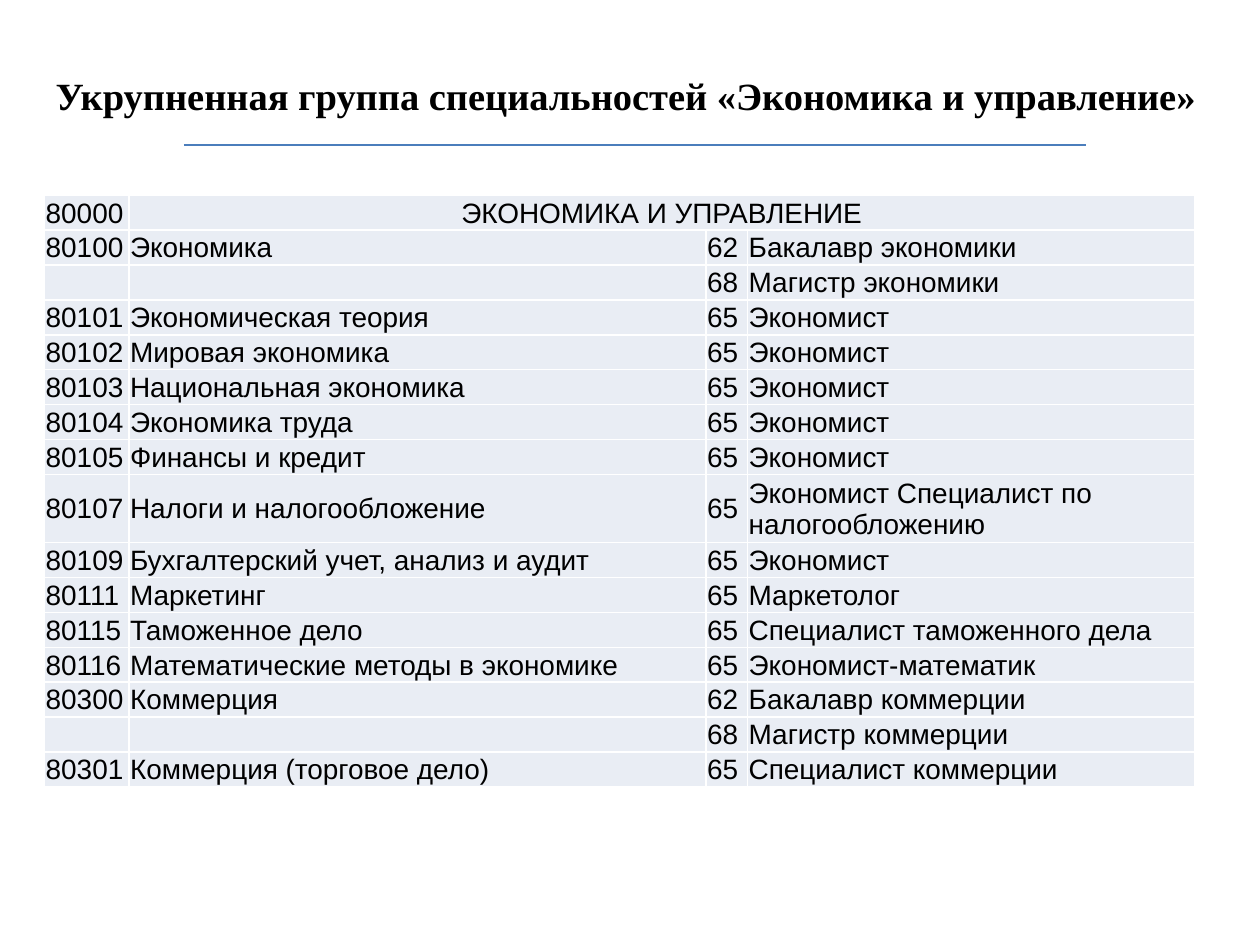
import pptx
import pptx.dml.color
import pptx.enum.shapes
import pptx.enum.text
import pptx.oxml.ns
import pptx.util
from lxml import etree

Pt = pptx.util.Pt
qn = pptx.oxml.ns.qn
ALIGN = pptx.enum.text.PP_ALIGN
MIDDLE = pptx.enum.text.MSO_ANCHOR.MIDDLE

COLUMNS = [48.24, 329.76, 23.76, 255.6]
ROW_HEIGHT, TALL_ROW_HEIGHT = 19.95, 39
SPECIALTIES = [
    ("80000", "ЭКОНОМИКА И УПРАВЛЕНИЕ", "", ""),
    ("80100", "Экономика", "62", "Бакалавр экономики"),
    ("", "", "68", "Магистр экономики"),
    ("80101", "Экономическая теория", "65", "Экономист"),
    ("80102", "Мировая экономика", "65", "Экономист"),
    ("80103", "Национальная экономика", "65", "Экономист"),
    ("80104", "Экономика труда", "65", "Экономист"),
    ("80105", "Финансы и кредит", "65", "Экономист"),
    ("80107", "Налоги и налогообложение", "65", "Экономист Специалист по налогообложению"),
    ("80109", "Бухгалтерский учет, анализ и аудит", "65", "Экономист"),
    ("80111", "Маркетинг", "65", "Маркетолог"),
    ("80115", "Таможенное дело", "65", "Специалист таможенного дела"),
    ("80116", "Математические методы в экономике", "65", "Экономист-математик"),
    ("80300", "Коммерция", "62", "Бакалавр коммерции"),
    ("", "", "68", "Магистр коммерции"),
    ("80301", "Коммерция (торговое дело)", "65", "Специалист коммерции"),
]


def rgb(color):
    """Turn a hex string into a colour."""
    return pptx.dml.color.RGBColor.from_string(color)


def write(tf, text, size=16, font="Arial", color="000000", bold=False, align=ALIGN.LEFT):
    """Write one formatted paragraph into a text frame."""
    tf.word_wrap = True
    p = tf.paragraphs[0]
    p.alignment = align
    if not text:
        p._p.get_or_add_endParaRPr().set("sz", str(size * 100))
        return
    r = p.add_run()
    r.text = text
    r.font.size = Pt(size)
    r.font.name = font
    r.font.bold = bold
    r.font.color.rgb = rgb(color)


def set_borders(cell, color, width):
    """Draw the same border on all four sides of a cell."""
    tcPr = cell._tc.get_or_add_tcPr()
    for i, side in enumerate(("a:lnL", "a:lnR", "a:lnT", "a:lnB")):
        ln = etree.Element(qn(side), w=str(Pt(width)))
        fill = etree.SubElement(ln, qn("a:solidFill"))
        etree.SubElement(fill, qn("a:srgbClr"), val=color)
        tcPr.insert(i, ln)


def add_title(s, left, top, width, height):
    """Place the heading and the rule beneath it."""
    sp = s.shapes.add_textbox(Pt(left), Pt(top), Pt(width), Pt(height))
    sp.text_frame.vertical_anchor = MIDDLE
    write(sp.text_frame, "Укрупненная группа специальностей «Экономика и управление»",
          size=22, font="Times New Roman", bold=True, align=ALIGN.CENTER)
    x, y = left + 90.7, top + 62.6
    line = s.shapes.add_connector(pptx.enum.shapes.MSO_CONNECTOR.STRAIGHT,
                                  Pt(x), Pt(y), Pt(x + 515.5), Pt(y))
    line.line.color.rgb = rgb("4B7EBC")
    line.line.width = Pt(0.75)
    etree.SubElement(line._element.spPr, qn("a:effectLst"))


def add_specialties(s, left, top, width, height):
    """Place the table of specialties and qualifications."""
    table = s.shapes.add_table(len(SPECIALTIES), len(COLUMNS),
                               Pt(left), Pt(top), Pt(width), Pt(height)).table
    table.first_row = table.horz_banding = False
    for column, size in zip(table.columns, COLUMNS):
        column.width = Pt(size)
    for row, values in zip(table.rows, SPECIALTIES):
        row.height = Pt(TALL_ROW_HEIGHT if len(values[3]) > 30 else ROW_HEIGHT)
        for i, (cell, text) in enumerate(zip(row.cells, values)):
            cell.margin_left = cell.margin_right = cell.margin_top = Pt(0.72)
            cell.margin_bottom = 0
            cell.vertical_anchor = MIDDLE
            cell.fill.solid()
            cell.fill.fore_color.rgb = rgb("E9EDF4")
            set_borders(cell, "FFFFFF", 1)
            heading = values is SPECIALTIES[0] and i == 1
            write(cell.text_frame, text, align=ALIGN.CENTER if heading else ALIGN.LEFT)
    table.cell(0, 1).merge(table.cell(0, 3))


def main():
    """Build and save the slide."""
    prs = pptx.Presentation()
    prs.slide_width, prs.slide_height = Pt(720), Pt(540)
    s = prs.slides.add_slide(prs.slide_layouts[6])
    add_title(s, 14.4, 20.2, 686.2, 68.4)
    add_specialties(s, 25.4, 111.6, sum(COLUMNS),
                    ROW_HEIGHT * (len(SPECIALTIES) - 1) + TALL_ROW_HEIGHT)
    prs.save("out.pptx")


if __name__ == "__main__":
    main()
